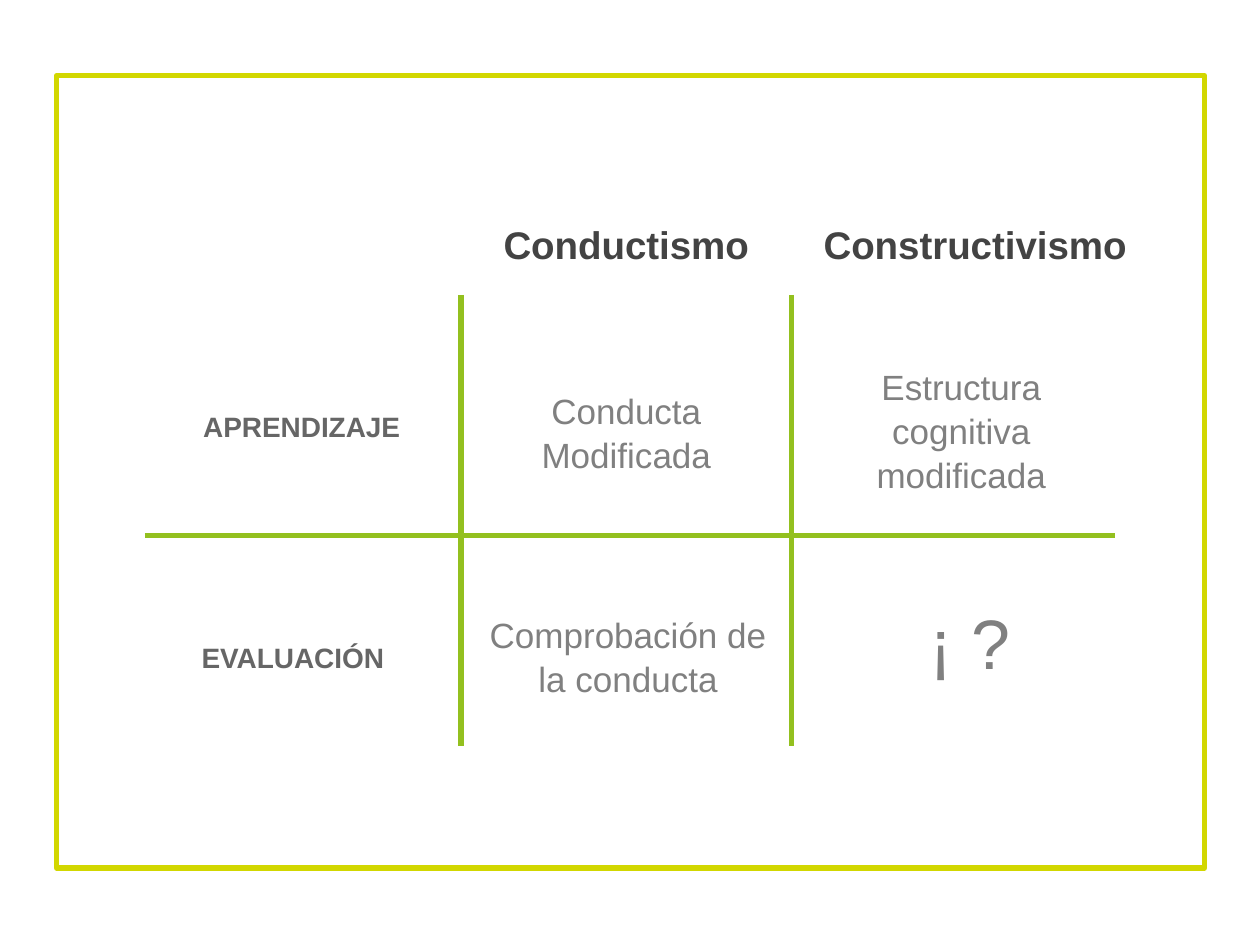
from lxml import etree
from pptx import Presentation
from pptx.dml.color import RGBColor
from pptx.enum.shapes import MSO_CONNECTOR, MSO_SHAPE
from pptx.enum.text import MSO_ANCHOR, MSO_AUTO_SIZE, PP_ALIGN
from pptx.oxml.ns import qn
from pptx.util import Pt

CENTER, LEFT = PP_ALIGN.CENTER, PP_ALIGN.LEFT
TOP, BOTTOM = MSO_ANCHOR.TOP, MSO_ANCHOR.BOTTOM
NO_AUTOFIT = MSO_AUTO_SIZE.NONE
STRAIGHT = MSO_CONNECTOR.STRAIGHT
RECTANGLE = MSO_SHAPE.RECTANGLE
COMPARISON_LAYOUT = 4


def color(value):
    return RGBColor.from_string(value)


class SlideBuilder:
    font_name = "Arial"
    inset = 7.2
    border_color = "D2D700"
    grid_color = "93C01F"
    title_color = "434343"
    label_color = "666666"
    body_color = "808080"
    line_width = 3

    def __init__(self, slide):
        self.slide = slide

    def frame(self, left, top, width, height):
        shape = self.slide.shapes.add_shape(
            RECTANGLE, Pt(left), Pt(top), Pt(width), Pt(height))
        shape.shadow.inherit = False
        shape.fill.background()
        shape.line.color.rgb = color(self.border_color)
        shape.line.width = Pt(self.line_width)

    def line(self, start_x, start_y, end_x, end_y):
        connector = self.slide.shapes.add_connector(
            STRAIGHT, Pt(start_x), Pt(start_y), Pt(end_x), Pt(end_y))
        connector.line.color.rgb = color(self.grid_color)
        connector.line.width = Pt(self.line_width)
        etree.SubElement(connector._element.spPr, qn("a:effectLst"))

    def set_text(self, shape, box, text, size, text_color, bold, anchor, alignment):
        shape.left, shape.top, shape.width, shape.height = map(Pt, box)
        text_frame = shape.text_frame
        text_frame.auto_size = NO_AUTOFIT
        text_frame.word_wrap = True
        text_frame.vertical_anchor = anchor
        text_frame.margin_left = text_frame.margin_right = Pt(self.inset)
        text_frame.margin_top = text_frame.margin_bottom = Pt(self.inset)
        paragraph = text_frame.paragraphs[0]
        paragraph.alignment = alignment
        paragraph.space_before = paragraph.space_after = Pt(0)
        run = paragraph.add_run()
        run.text = text
        run.font.name = self.font_name
        run.font.size = Pt(size)
        run.font.bold = bold
        run.font.color.rgb = color(text_color)
        return paragraph

    def title(self, box, headings, first_indent, tab_position):
        shape = self.slide.shapes.title
        paragraph = self.set_text(shape, box, "\t".join(headings), 22,
                                  self.title_color, True, BOTTOM, LEFT)
        shape.text_frame.margin_left = Pt(first_indent)
        properties = paragraph._p.get_or_add_pPr()
        tabs = etree.SubElement(properties, qn("a:tabLst"))
        etree.SubElement(tabs, qn("a:tab"), pos=str(Pt(tab_position)), algn="l")

    def label(self, box, text):
        shape = self.slide.shapes.add_textbox(0, 0, 0, 0)
        self.set_text(shape, box, text, 16, self.label_color, True, BOTTOM, CENTER)

    def cell(self, index, box, text, size=20, indent=0):
        shape = self.slide.placeholders[index]
        paragraph = self.set_text(shape, box, text, size,
                                  self.body_color, False, TOP, CENTER)
        paragraph.line_spacing = 1.04
        properties = paragraph._p.get_or_add_pPr()
        properties.set("marL", str(Pt(indent)))
        properties.set("indent", "0")
        etree.SubElement(properties, qn("a:buNone"))


def main():
    presentation = Presentation()
    presentation.slide_width, presentation.slide_height = Pt(720), Pt(540)
    layout = presentation.slide_layouts[COMPARISON_LAYOUT]
    builder = SlideBuilder(presentation.slides.add_slide(layout))

    builder.frame(32.4, 43.2, 655.9, 452.9)
    builder.title((263.5, 109.4, 406, 50.4),
                  ("Conductismo", "Constructivismo"), 24.2, 182.9)

    row_height = 67.7
    builder.label((89.3, 193, 166.3, row_height), "APRENDIZAJE")
    builder.label((84.2, 324.7, 166.3, row_height), "EVALUACIÓN")
    builder.cell(1, (272.2, 214.6, 171.4, row_height), "Conducta Modificada")
    builder.cell(2, (457.9, 200.9, 182.9, row_height),
                 "Estructura cognitiva modificada")
    builder.cell(3, (270.7, 342.7, 176.4, row_height),
                 "Comprobación de la conducta")
    builder.cell(4, (465.8, 333.4, 166.3, row_height), "¡ ?", 40, 10.8)

    for column_x in (263.5, 452.2):
        builder.line(column_x, 168.5, column_x, 426.2)
    builder.line(82.8, 306, 637.2, 306)

    presentation.save("out.pptx")


if __name__ == "__main__":
    main()
